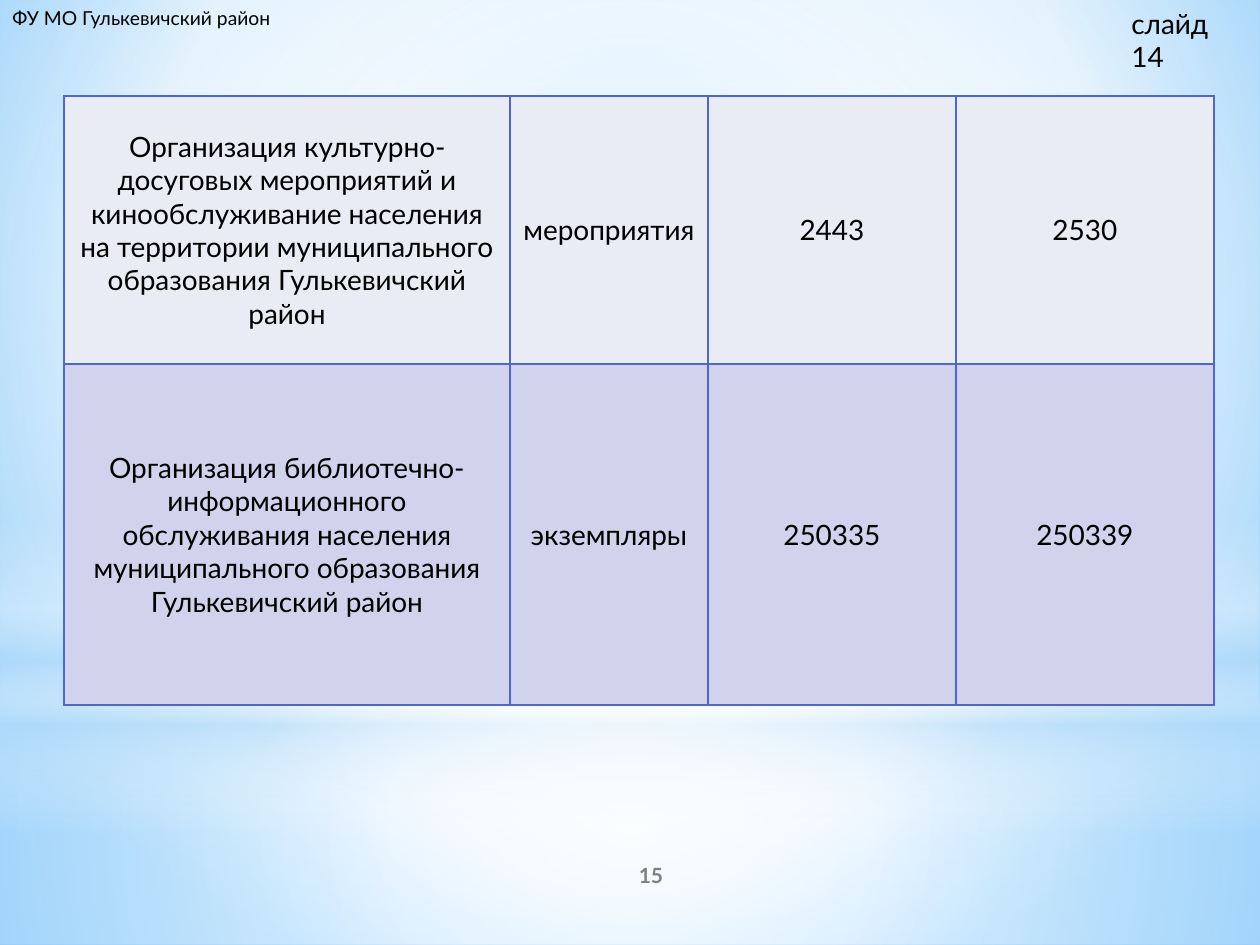
from lxml import etree
from pptx import Presentation
from pptx import util as u
from pptx.dml.color import RGBColor
from pptx.enum import shapes, text
from pptx.oxml import ns

PX = 914400 / 126
FONT = "Lato"
BLACK = RGBColor(0x00, 0x00, 0x00)
GRAY = RGBColor(0x80, 0x80, 0x80)
WHITE = RGBColor(0xFF, 0xFF, 0xFF)
SKY = RGBColor(0xB4, 0xDC, 0xFA)
LIGHT_BLUE = RGBColor(0x9E, 0xD5, 0xFF)
DEEP_BLUE = RGBColor(0x5B, 0xB9, 0xFF)
BORDER = RGBColor(0x4E, 0x67, 0xC8)
ROW_FILLS = [RGBColor(0xE9, 0xEB, 0xF5), RGBColor(0xD0, 0xD3, 0xEB)]

COLUMN_WIDTHS = [446, 198, 248, 258]
ROW_HEIGHTS = [268, 341]
SERVICES = [
    ["Организация культурно-досуговых мероприятий и кинообслуживание населения "
     "на территории муниципального образования Гулькевичский район",
     "мероприятия", "2443", "2530"],
    ["Организация библиотечно-информационного обслуживания населения "
     "муниципального образования Гулькевичский район",
     "экземпляры", "250335", "250339"],
]
CENTER = (50, 50, 50, 50)


def px(*lengths):
    return [u.Emu(round(length * PX)) for length in lengths]


def sub(parent, tag, **attributes):
    child = etree.SubElement(parent, ns.qn(tag))
    for key, value in attributes.items():
        child.set(key, str(value))
    return child


def set_gradient(properties, stops, focus=None):
    """Swap a solid fill for stops of (position, colour, opacity); no focus means top to bottom."""
    solid = properties.find(ns.qn("a:solidFill"))
    gradient = etree.Element(ns.qn("a:gradFill"), rotWithShape="1")
    stop_list = sub(gradient, "a:gsLst")
    for position, color, opacity in stops:
        stop = sub(stop_list, "a:gs", pos=position * 1000)
        sub(sub(stop, "a:srgbClr", val=color), "a:alpha", val=opacity * 1000)
    if focus:
        radial = sub(gradient, "a:path", path="circle")
        sides = {side: inset * 1000 for side, inset in zip("ltrb", focus)}
        sub(radial, "a:fillToRect", **sides)
    else:
        sub(gradient, "a:lin", ang=5400000, scaled=0)
    properties.replace(solid, gradient)


def set_backdrop(slide):
    slide.background.fill.solid()
    properties = next(slide.element.iter(ns.qn("p:bgPr")))
    set_gradient(properties, [(0, LIGHT_BLUE, 100), (60, WHITE, 100), (100, DEEP_BLUE, 100)],
                 (20, 10, 20, 60))


def add_glow(slide, kind, box, stops, focus=None):
    glow = slide.shapes.add_shape(kind, *px(*box))
    glow.shadow.inherit = False
    glow.line.fill.background()
    glow.fill.solid()
    set_gradient(glow.element.spPr, stops, focus)


def format_paragraph(paragraph, size, color=BLACK, bold=False, align=text.PP_ALIGN.CENTER):
    paragraph.alignment = align
    font = paragraph.font
    font.name, font.size, font.bold = FONT, u.Pt(size), bold
    font.color.rgb = color


def add_label(slide, box, words, size, wrap=False, **style):
    frame = slide.shapes.add_textbox(*px(*box)).text_frame
    frame.word_wrap = wrap
    frame.text = words
    format_paragraph(frame.paragraphs[0], size, **style)
    return frame


def set_borders(cell):
    properties = cell._tc.get_or_add_tcPr()
    for index, side in enumerate(("a:lnL", "a:lnR", "a:lnT", "a:lnB")):
        line = etree.Element(ns.qn(side), w=str(u.Pt(1)))
        sub(sub(line, "a:solidFill"), "a:srgbClr", val=BORDER)
        properties.insert(index, line)


def add_services_table(slide):
    box = px(64, 96, sum(COLUMN_WIDTHS), sum(ROW_HEIGHTS))
    table = slide.shapes.add_table(len(SERVICES), len(COLUMN_WIDTHS), *box).table
    table.first_row = False
    for column, width in zip(table.columns, px(*COLUMN_WIDTHS)):
        column.width = width
    for row, height, values, fill in zip(table.rows, px(*ROW_HEIGHTS), SERVICES, ROW_FILLS):
        row.height = height
        for cell, value in zip(row.cells, values):
            cell.text = value
            cell.vertical_anchor = text.MSO_ANCHOR.MIDDLE
            cell.fill.solid()
            cell.fill.fore_color.rgb = fill
            format_paragraph(cell.text_frame.paragraphs[0], 16)
            set_borders(cell)


def main():
    presentation = Presentation()
    presentation.slide_width, presentation.slide_height = px(1260, 945)
    slide = presentation.slides.add_slide(presentation.slide_layouts[6])

    set_backdrop(slide)
    rectangle, ellipse = shapes.MSO_SHAPE.RECTANGLE, shapes.MSO_SHAPE.OVAL
    add_glow(slide, rectangle, (0, 703, 1260, 242),
             [(0, WHITE, 91), (37, WHITE, 76), (100, SKY, 79)], CENTER)
    add_glow(slide, rectangle, (0, 0, 1260, 703),
             [(0, WHITE, 89), (48, WHITE, 62), (100, SKY, 79)], CENTER)
    add_glow(slide, rectangle, (0, 519, 1260, 315),
             [(0, WHITE, 0), (29, WHITE, 30), (45, SKY, 40),
              (55, WHITE, 26), (65, SKY, 60), (100, WHITE, 0)])
    add_glow(slide, ellipse, (0, 220, 1260, 703), [(0, WHITE, 100), (56, WHITE, 0)], CENTER)

    page_number = add_label(slide, (525, 850, 252, 50), "15", 12, color=GRAY, bold=True)
    page_number.word_wrap = True
    page_number.vertical_anchor = text.MSO_ANCHOR.MIDDLE
    add_services_table(slide)
    left = text.PP_ALIGN.LEFT
    add_label(slide, (1119, 0, 136, 50), "слайд 14", 16, wrap=True, align=left)
    add_label(slide, (0, 0, 284, 37), "ФУ МО Гулькевичский район", 11, align=left)

    presentation.save("out.pptx")


if __name__ == "__main__":
    main()
